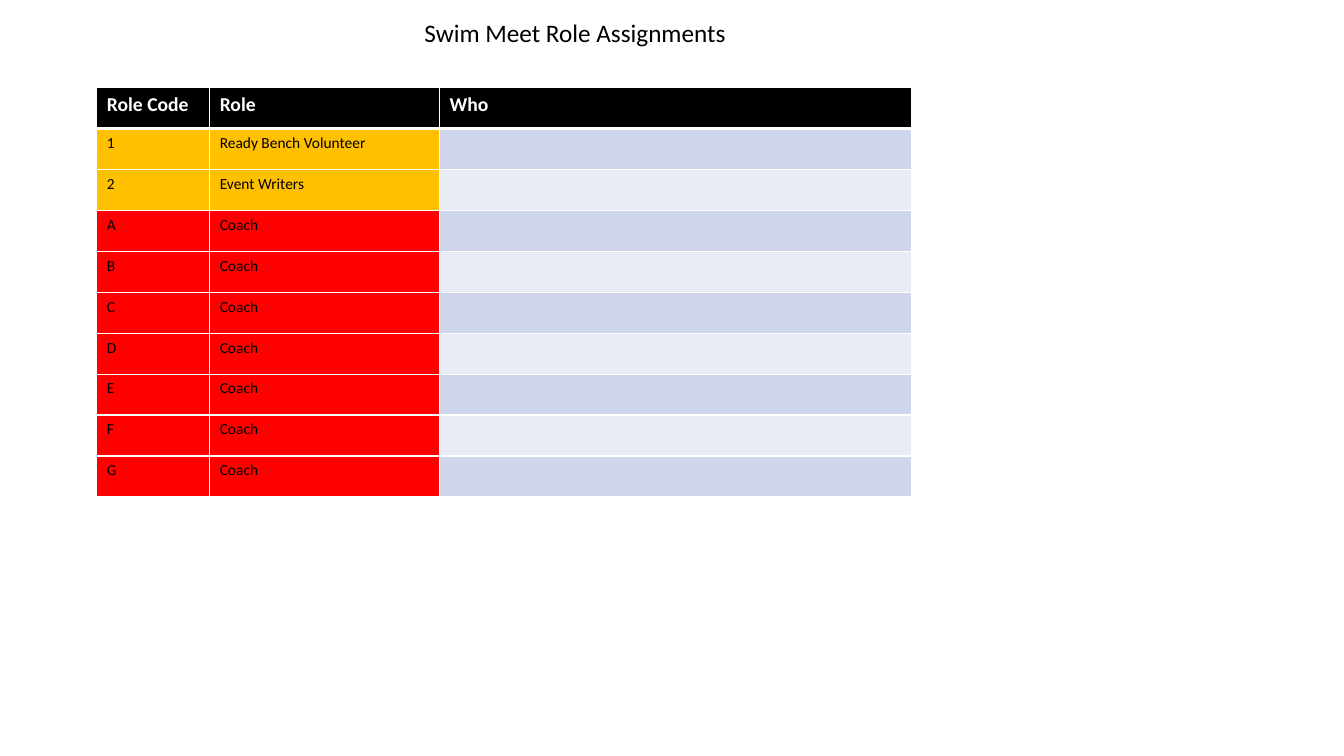
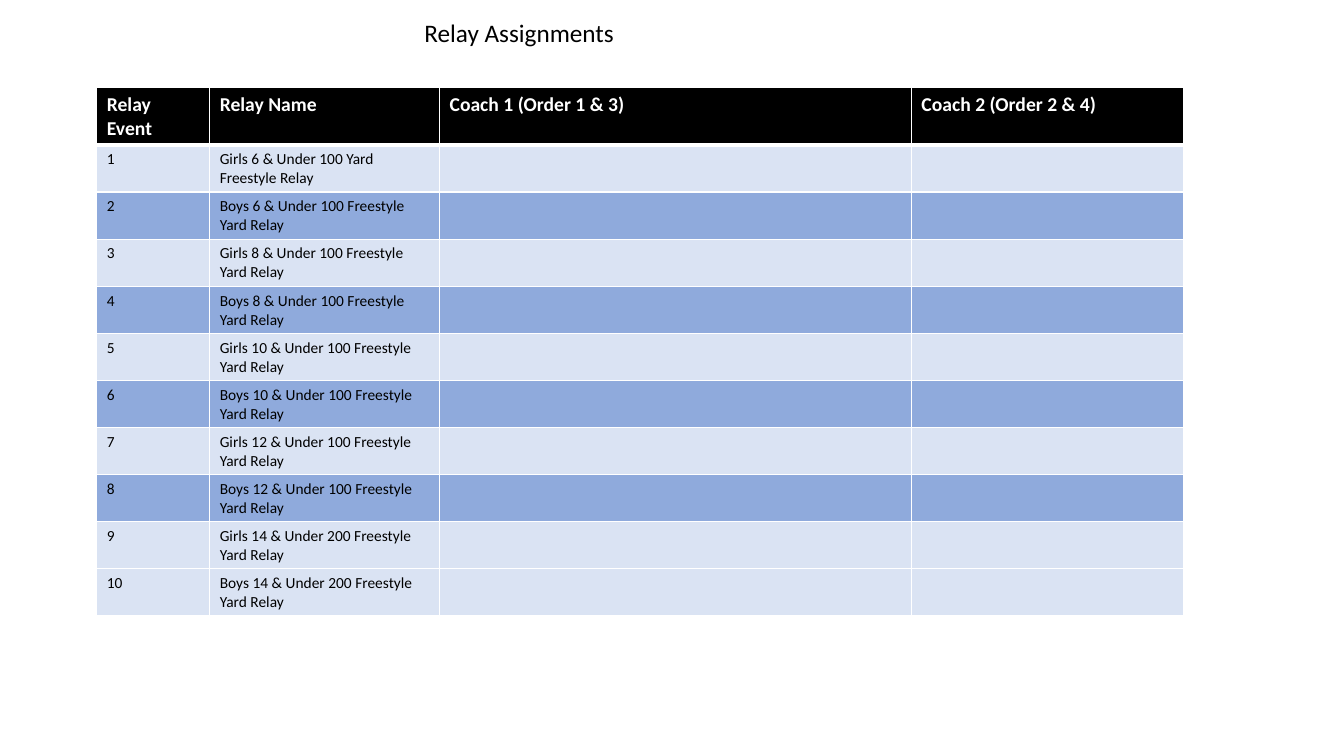
from lxml import etree
from pptx import Presentation
from pptx.dml.color import RGBColor
from pptx.enum.text import MSO_ANCHOR, MSO_AUTO_SIZE, PP_ALIGN
from pptx.oxml.ns import qn
from pptx.util import Inches, Pt

# Content
ROLE_HEADER = ("Role Code", "Role", "Who")
ROLES = [("1", "Ready Bench Volunteer"), ("2", "Event Writers")]
ROLES += [(code, "Coach") for code in "ABCDEFG"]

RELAY_HEADER = ("Relay Event", "Relay Name",
                "Coach 1 (Order 1 & 3)", "Coach 2 (Order 2 & 4)")
RELAYS = [
    "Girls 6 & Under 100 Yard Freestyle Relay",
    "Boys 6 & Under 100 Freestyle Yard Relay",
    "Girls 8 & Under 100 Freestyle Yard Relay",
    "Boys 8 & Under 100 Freestyle Yard Relay",
    "Girls 10 & Under 100 Freestyle Yard Relay",
    "Boys 10 & Under 100 Freestyle Yard Relay",
    "Girls 12 & Under 100 Freestyle Yard Relay",
    "Boys 12 & Under 100 Freestyle Yard Relay",
    "Girls 14 & Under 200 Freestyle Yard Relay",
    "Boys 14 & Under 200 Freestyle Yard Relay",
]

# Shared style
COLORS = {
    "black": "000000", "white": "FFFFFF",
    "volunteer": "FFC000", "coach": "FF0000",
    "band_dark": "CFD5EA", "band_light": "E9EBF5",
    "girls": "DAE3F3", "boys": "8FAADC",
}
FONT = "Calibri"
TITLE_BOX = (4.11, 0.12, 5.18, 0.42)
TABLE_LEFT, TABLE_TOP = Inches(0.96), Inches(0.87)
COLUMN_WIDTHS = (1.12, 2.28, 4.68, 2.7)
ROW_HEIGHT = Inches(4.06) // 10


def color(name):
    return RGBColor.from_string(COLORS[name])


def set_font(paragraph, size, color_name, bold=False):
    font = paragraph.font
    font.name, font.size, font.bold = FONT, Pt(size), bold
    font.color.rgb = color(color_name)


def set_borders(cell, **widths):
    properties = cell._tc.get_or_add_tcPr()
    for side in "LRTB":
        width = widths.get(side, 1)
        line = etree.SubElement(properties, qn(f"a:ln{side}"), w=str(Pt(width)))
        fill = etree.SubElement(line, qn("a:solidFill"))
        etree.SubElement(fill, qn("a:srgbClr"), val=COLORS["white"])


def add_title(slide, text):
    title = slide.shapes.title
    title.left, title.top, title.width, title.height = map(Inches, TITLE_BOX)
    frame = title.text_frame
    frame.text = text
    frame.word_wrap = True
    frame.auto_size = MSO_AUTO_SIZE.SHAPE_TO_FIT_TEXT
    frame.vertical_anchor = MSO_ANCHOR.TOP
    frame.paragraphs[0].alignment = PP_ALIGN.LEFT
    set_font(frame.paragraphs[0], 18, "black")


def add_assignments(slide, header, rows, fill_for):
    """Draw a table; fill_for(row, column) names the fill of a body cell."""
    widths = [Inches(width) for width in COLUMN_WIDTHS[:len(header)]]
    table = slide.shapes.add_table(
        len(rows) + 1, len(header), TABLE_LEFT, TABLE_TOP,
        sum(widths), ROW_HEIGHT * (len(rows) + 1)).table
    for column, width in zip(table.columns, widths):
        column.width = width
    for r, values in enumerate([header, *rows]):
        table.rows[r].height = ROW_HEIGHT
        for c in range(len(header)):
            cell = table.cell(r, c)
            if c < len(values):
                cell.text = values[c]
            paragraph = cell.text_frame.paragraphs[0]
            if r == 0:
                set_borders(cell, B=3)
                set_font(paragraph, 14, "white", bold=True)
            else:
                set_borders(cell, T=3 if r == 1 else 1)
                set_font(paragraph, 11, "black")
            cell.fill.solid()
            cell.fill.fore_color.rgb = color(
                "black" if r == 0 else fill_for(r - 1, c))


def role_fill(row, column):
    if column < 2:
        return "coach" if ROLES[row][1] == "Coach" else "volunteer"
    return "band_light" if row % 2 else "band_dark"


def relay_fill(row, column):
    # The last row stays light
    return "boys" if row % 2 and row < len(RELAYS) - 1 else "girls"


def main():
    prs = Presentation()
    prs.slide_width, prs.slide_height = Inches(13.33), Inches(7.5)
    relay_rows = [(str(n), name) for n, name in enumerate(RELAYS, 1)]
    pages = [
        ("Swim Meet Role Assignments", ROLE_HEADER, ROLES, role_fill),
        ("Relay Assignments", RELAY_HEADER, relay_rows, relay_fill),
    ]
    for title, header, rows, fill_for in pages:
        slide = prs.slides.add_slide(prs.slide_layouts[5])
        add_title(slide, title)
        add_assignments(slide, header, rows, fill_for)
    prs.save("out.pptx")


if __name__ == "__main__":
    main()
